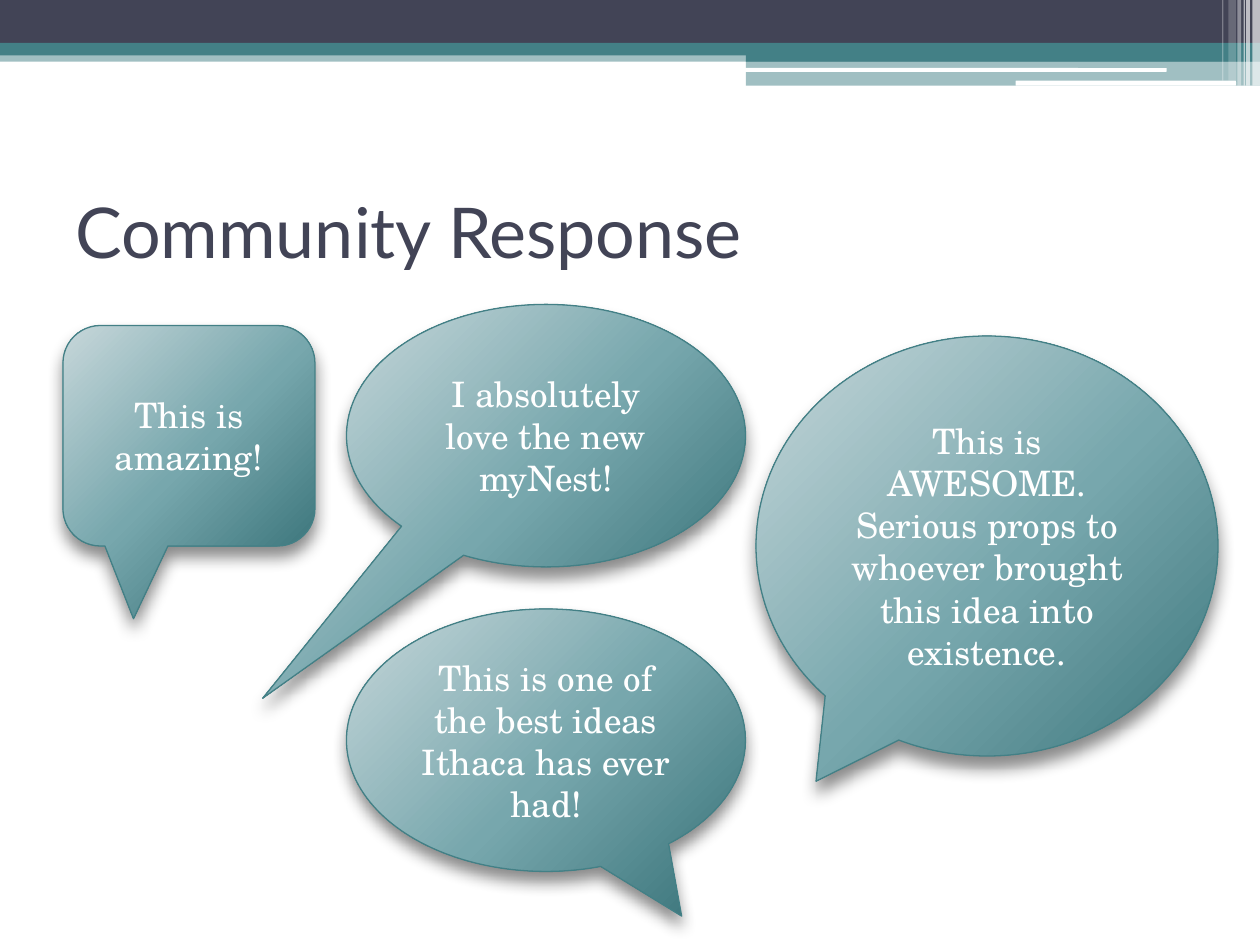
from dataclasses import dataclass

from pptx import Presentation
from pptx.dml.color import RGBColor
from pptx.enum.shapes import MSO_SHAPE as Preset
from pptx.enum.text import MSO_ANCHOR as Anchor, PP_ALIGN as Align
from pptx.oxml import parse_xml
from pptx.oxml.ns import nsdecls, qn
from pptx.oxml.xmlchemy import OxmlElement
from pptx.util import Inches, Pt


@dataclass(frozen=True)
class Theme:
    navy: str = "424456"
    teal: str = "438086"
    white: str = "FFFFFF"
    shadow: str = "000000"
    gradient: tuple = ((0, "C7D7DA"), (55, "77A7AD"), (100, "3E777D"))
    title_font: str = "Lato"
    body_font: str = "TeX Gyre Schola"
    title_size: int = 40
    body_size: int = 20
    outline: float = 0.75


THEME = Theme()
COARSE = Inches(1) / 12
FINE = Inches(1) / 100


@dataclass(frozen=True)
class Frame:
    column: int
    row: int
    columns: int
    rows: int

    def on(self, cell: float) -> tuple:
        return tuple(round(length * cell) for length in
                     (self.column, self.row, self.columns, self.rows))


@dataclass(frozen=True)
class Band:
    frame: Frame
    color: str
    opacity: int = 100
    preset: Preset = Preset.RECTANGLE


@dataclass(frozen=True)
class Bubble:
    text: str
    frame: Frame
    adjustments: tuple
    preset: Preset = Preset.OVAL_CALLOUT


def stripe(column: int, columns: int, rows: int, opacity: int) -> Band:
    return Band(Frame(column, 0, columns, rows), THEME.white, opacity)


def highlight(frame: Frame) -> Band:
    return Band(frame, THEME.white, preset=Preset.ROUNDED_RECTANGLE)


BANDS = (
    Band(Frame(0, 40, 1000, 9), THEME.teal, 50),
    Band(Frame(0, 0, 1000, 34), THEME.navy),
    Band(Frame(0, 34, 1000, 10), THEME.teal),
    Band(Frame(592, 39, 408, 10), THEME.teal),
    Band(Frame(592, 48, 408, 20), THEME.teal, 50),
    highlight(Frame(591, 54, 335, 3)),
    highlight(Frame(806, 64, 175, 4)),
    stripe(994, 6, 68, 65),
    stripe(989, 3, 68, 65),
    stripe(987, 1, 68, 60),
    stripe(982, 3, 68, 40),
    stripe(975, 6, 64, 20),
    stripe(970, 1, 64, 30),
)

TITLE_FRAME = Frame(6, 15, 108, 14)

BUBBLES = (
    Bubble("This is AWESOME. Serious props to whoever brought this idea into existence.",
           Frame(72, 32, 44, 40), (-0.37, 0.56)),
    Bubble("This is one of the best ideas Ithaca has ever had!",
           Frame(33, 58, 38, 25), (0.34, 0.67)),
    Bubble("This is amazing!", Frame(6, 31, 24, 21), (-0.22, 0.83, 0.17),
           Preset.ROUNDED_RECTANGULAR_CALLOUT),
    Bubble("I absolutely love the new myNest!",
           Frame(33, 29, 38, 25), (-0.71, 1)),
)


def rgb(color: str) -> RGBColor:
    return RGBColor.from_string(color)


def write(shape, text: str, font: str, size: int, color: str, align: Align) -> None:
    text_frame = shape.text_frame
    text_frame.text = text
    text_frame.word_wrap = True
    text_frame.vertical_anchor = Anchor.MIDDLE
    paragraph = text_frame.paragraphs[0]
    paragraph.alignment = align
    for run in paragraph.runs:
        run.font.name = font
        run.font.size = Pt(size)
        run.font.color.rgb = rgb(color)


def draw_band(slide, band: Band) -> None:
    shape = slide.shapes.add_shape(band.preset, *band.frame.on(FINE))
    shape.shadow.inherit = False
    shape.line.fill.background()
    shape.fill.solid()
    shape.fill.fore_color.rgb = rgb(band.color)
    if band.opacity < 100:
        alpha = OxmlElement("a:alpha")
        alpha.set("val", str(band.opacity * 1000))
        shape._element.spPr.find(qn("a:solidFill"))[0].append(alpha)


def fill_gradient(shape) -> None:
    stops = "".join(
        f'<a:gs pos="{position * 1000}"><a:srgbClr val="{color}"/></a:gs>'
        for position, color in THEME.gradient)
    gradient = parse_xml(
        f'<a:gradFill {nsdecls("a")} rotWithShape="1"><a:gsLst>{stops}</a:gsLst>'
        '<a:path path="circle"><a:fillToRect l="-40000" t="-90000" '
        'r="140000" b="190000"/></a:path></a:gradFill>')
    shape.fill.solid()
    properties = shape._element.spPr
    properties.replace(properties.find(qn("a:solidFill")), gradient)


def cast_shadow(shape) -> None:
    shape.shadow.inherit = False
    shape._element.spPr.find(qn("a:effectLst")).append(parse_xml(
        f'<a:outerShdw {nsdecls("a")} blurRad="{Pt(9)}" dist="{Pt(6)}" '
        'dir="5400000" rotWithShape="0">'
        f'<a:srgbClr val="{THEME.shadow}"><a:alpha val="45000"/></a:srgbClr>'
        '</a:outerShdw>'))


def draw_bubble(slide, bubble: Bubble) -> None:
    shape = slide.shapes.add_shape(bubble.preset, *bubble.frame.on(COARSE))
    for index, value in enumerate(bubble.adjustments):
        shape.adjustments[index] = value
    fill_gradient(shape)
    shape.line.color.rgb = rgb(THEME.teal)
    shape.line.width = Pt(THEME.outline)
    cast_shadow(shape)
    write(shape, bubble.text, THEME.body_font, THEME.body_size, THEME.white, Align.CENTER)


def main() -> None:
    presentation = Presentation()
    presentation.slide_width = Inches(10)
    presentation.slide_height = Inches(7.5)
    slide = presentation.slides.add_slide(presentation.slide_layouts[6])
    for band in BANDS:
        draw_band(slide, band)
    title = slide.shapes.add_textbox(*TITLE_FRAME.on(COARSE))
    write(title, "Community Response", THEME.title_font, THEME.title_size,
          THEME.navy, Align.LEFT)
    for bubble in BUBBLES:
        draw_bubble(slide, bubble)
    presentation.save("out.pptx")


if __name__ == "__main__":
    main()
